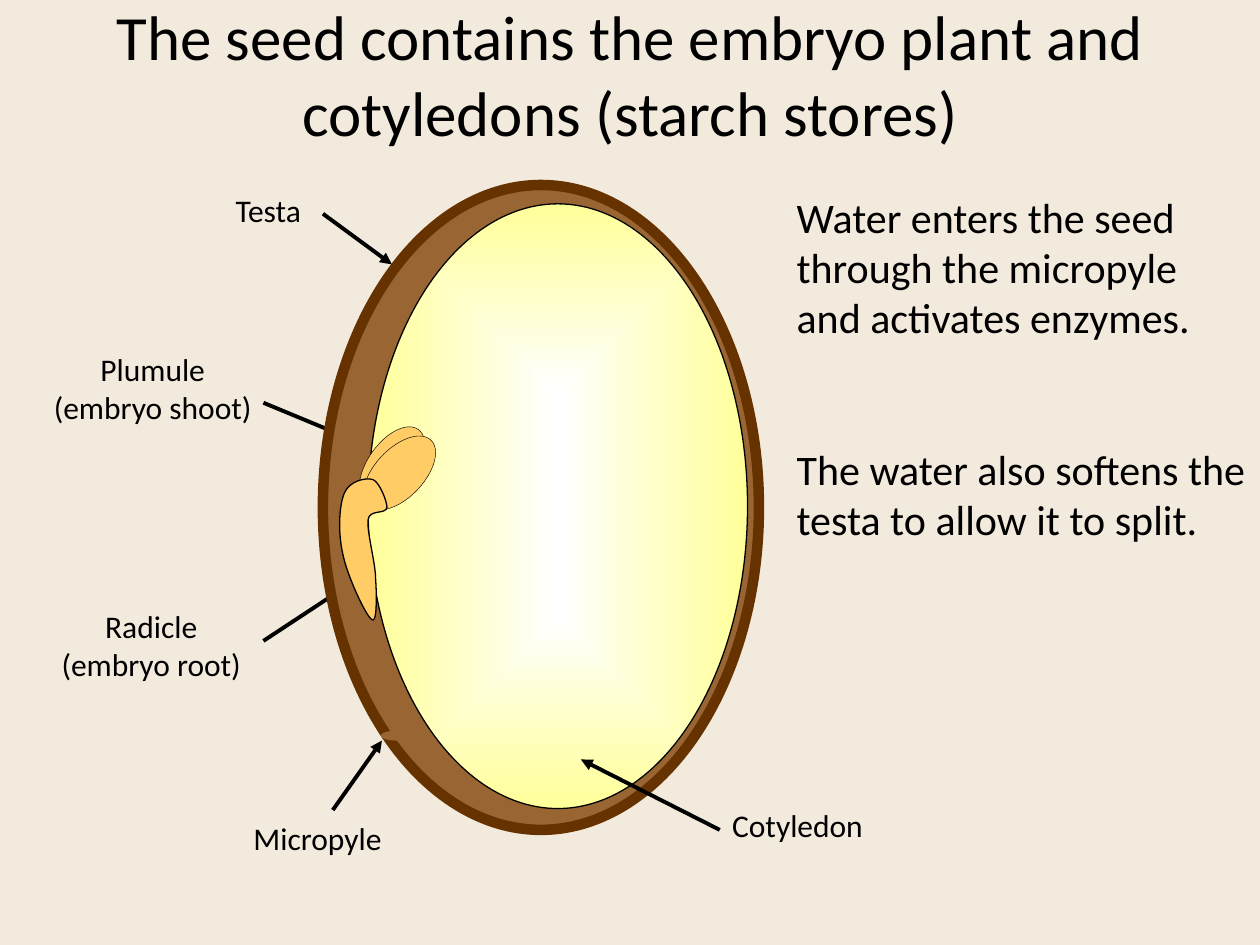
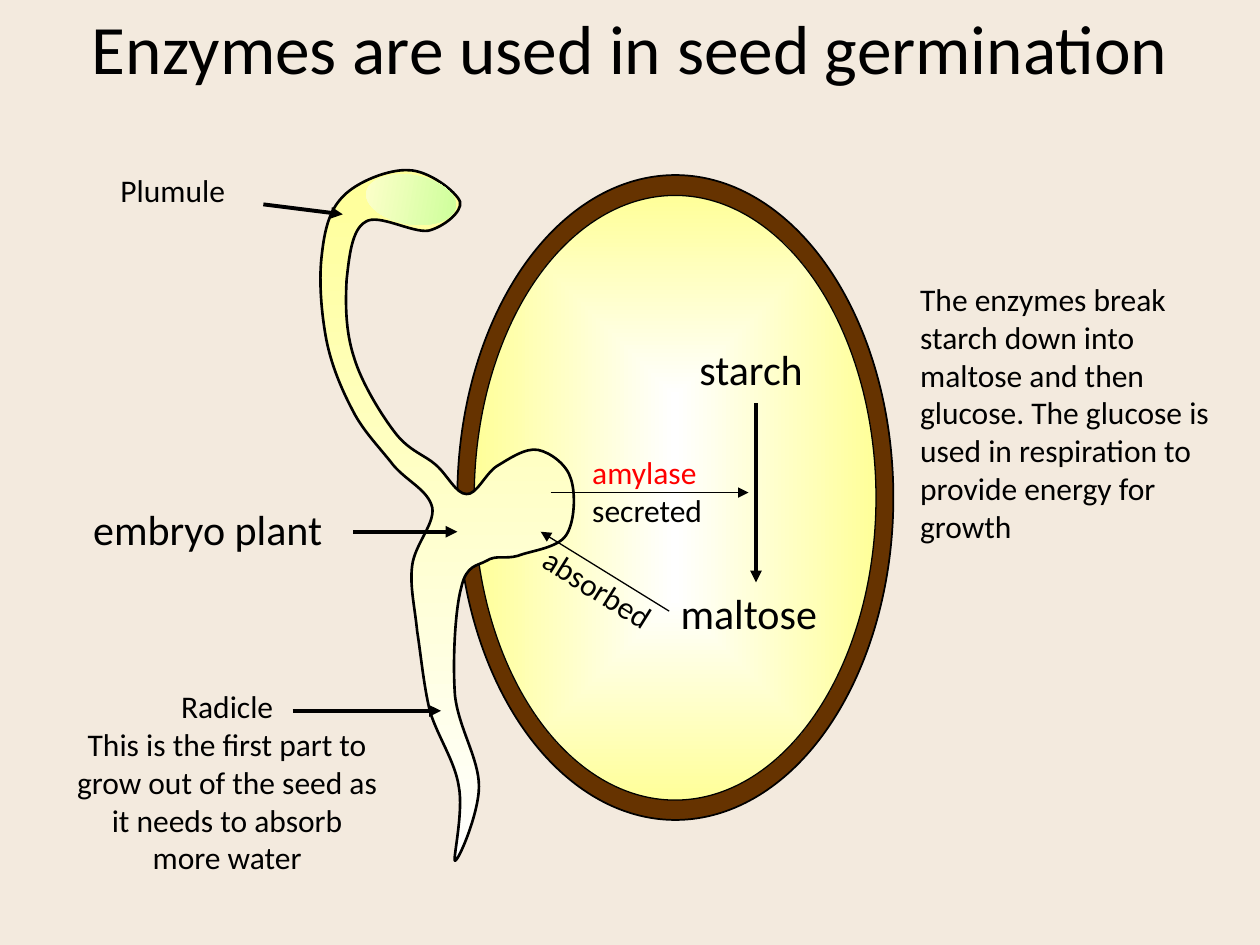
"""Build two slides on the seed and its germination."""
from lxml import etree
from pptx import Presentation, util as u
from pptx.dml import color
from pptx.enum import shapes, text
from pptx.oxml import ns

FONT = "Calibri"
HUES = {
    "sand": "F3EADE", "ink": "000000", "red": "FF0000", "white": "FFFFFF",
    "coat": "663300", "husk": "996633", "germ": "FFCC66",
    "lemon": "FFFF99", "cream": "FFFFCC", "lime": "CCFF99",
}
SEED = (8.79, 13)
LEAF = (1.83, 0.99)
ROOT = [
    (28, 2), (22, 0, 9, 3, 5, 13), (1, 23, 0, 44, 4, 61), (7, 77, 22, 110, 27, 113),
    (31, 117, 31, 94, 30, 81), (30, 68, 23, 44, 24, 34), (25, 25, 38, 30, 39, 24),
    (39, 19, 33, 4, 28, 2),
]
SPROUT = [
    (141, 239), (151, 233, 164, 224, 174, 226), (184, 228, 197, 238, 200, 249),
    (204, 261, 203, 284, 196, 294), (189, 304, 168, 306, 158, 310),
    (147, 313, 141, 309, 133, 314), (126, 318, 117, 317, 113, 335),
    (108, 353, 106, 394, 108, 421), (111, 447, 127, 471, 127, 493),
    (127, 514, 111, 552, 108, 552), (106, 552, 115, 513, 111, 493),
    (108, 473, 94, 453, 88, 433), (83, 412, 81, 389, 78, 370),
    (76, 350, 72, 334, 74, 318), (76, 301, 92, 285, 90, 272),
    (87, 258, 70, 251, 59, 238), (49, 225, 35, 211, 27, 195),
    (18, 178, 10, 159, 6, 139), (2, 118, 0, 93, 2, 74), (4, 55, 7, 37, 19, 25),
    (30, 13, 56, 3, 71, 4), (87, 4, 109, 21, 112, 29), (114, 37, 99, 49, 87, 52),
    (74, 54, 47, 38, 37, 45), (26, 51, 24, 73, 22, 91), (21, 110, 21, 132, 28, 153),
    (34, 173, 50, 199, 61, 213), (72, 227, 84, 230, 93, 238),
    (102, 246, 109, 261, 117, 261), (125, 262, 132, 245, 141, 239),
]


def rgb(name):
    """Return the named colour."""
    return color.RGBColor.from_string(HUES[name])


def shift(box, x, y, *size):
    """Return a place given from the corner of a box, as lengths."""
    return [u.Cm(n) for n in (box[0] + x, box[1] + y, *size)]


def write(frame, words, size=18, hues=("ink",), align="LEFT", gap=0, wrap=False):
    """Fill a text frame, one paragraph to a line of words."""
    frame.word_wrap = wrap
    frame.auto_size = text.MSO_AUTO_SIZE.NONE
    for i, line in enumerate(words.split("\n")):
        para = frame.add_paragraph() if i else frame.paragraphs[0]
        para.alignment = text.PP_ALIGN[align]
        para.space_before = u.Pt(gap if i else 0)
        run = para.add_run()
        run.text = line
        run.font.name, run.font.size = FONT, u.Pt(size)
        run.font.color.rgb = rgb(hues[i % len(hues)])


def label(slide, box, place, words, turn=0, **form):
    """Add a text box at a place within the box."""
    item = slide.shapes.add_textbox(*shift(box, *place))
    item.rotation = turn
    write(item.text_frame, words, **form)


def blend(fill, first, last, angle=None):
    """Fill with two colours, from the centre unless an angle is given."""
    fill.gradient()
    for stop, name, spot in zip(fill.gradient_stops, (first, last), (0, 1)):
        stop.color.rgb, stop.position = rgb(name), spot
    if angle is not None:
        fill.gradient_angle = angle
        return
    grad = fill._fill._gradFill
    grad.remove(grad.find(ns.qn("a:lin")))
    core = etree.SubElement(grad, ns.qn("a:path"), {"path": "shape"})
    etree.SubElement(core, ns.qn("a:fillToRect"), dict.fromkeys("ltrb", "50000"))


def paint(item, fill, edge="ink", width=0.75):
    """Set the fill, a name or a blend, and the edge of a shape."""
    item.shadow.inherit = False
    if isinstance(fill, str):
        item.fill.solid()
        item.fill.fore_color.rgb = rgb(fill)
    else:
        blend(item.fill, *fill)
    if width:
        item.line.color.rgb, item.line.width = rgb(edge), u.Pt(width)
    else:
        item.line.fill.background()


def oval(slide, box, place, fill, turn=0, **edge):
    """Add an ellipse at a place within the box."""
    item = slide.shapes.add_shape(shapes.MSO_SHAPE.OVAL, *shift(box, *place))
    item.rotation = turn
    paint(item, fill, **edge)


def arrow(slide, box, ends, width=2.25):
    """Add an arrow between two points of the box."""
    points = shift(box, *ends[:2]) + shift(box, *ends[2:])
    item = slide.shapes.add_connector(shapes.MSO_CONNECTOR.STRAIGHT, *points)
    item.line.color.rgb, item.line.width = rgb("ink"), u.Pt(width)
    props = item._element.spPr
    etree.SubElement(props.find(ns.qn("a:ln")), ns.qn("a:tailEnd"), type="triangle")
    etree.SubElement(props, ns.qn("a:effectLst"))


def bend(item):
    """Turn each three line segments of an outline into one cubic curve."""
    lines = list(item._element.iter(ns.qn("a:lnTo")))
    for trio in zip(*[iter(lines)] * 3):
        curve = etree.Element(ns.qn("a:cubicBezTo"))
        trio[0].addprevious(curve)
        for line in trio:
            curve.append(line[0])
            line.getparent().remove(line)


def organ(slide, box, place, curves, fill, **edge):
    """Add a closed curved outline, drawn in hundredths of 2.54 cm."""
    left, top = shift(box, *place)
    unit = u.Cm(2.54) // 100
    dots = [(left + c[i] * unit, top + c[i + 1] * unit)
            for c in curves for i in range(0, len(c), 2)]
    pen = slide.shapes.build_freeform(*dots[0])
    pen.add_line_segments(dots[1:], close=True)
    item = pen.convert_to_shape()
    bend(item)
    paint(item, fill, **edge)


def seed(slide, box, place, core, coat, **edge):
    """Add the coat of a seed and the starch store inside it."""
    oval(slide, box, (*place, *SEED), coat, **edge)
    oval(slide, box, core, ("white", "lemon"))


def begin(deck, words, size, height):
    """Add a slide with its title across the top."""
    slide = deck.slides.add_slide(deck.slide_layouts[5])
    title = slide.shapes.title
    title.left, title.top, title.width, title.height = shift((0, 0), 0, 0, 25.4, height)
    title.text_frame.vertical_anchor = text.MSO_ANCHOR.MIDDLE
    write(title.text_frame, words, size=size, align="CENTER", wrap=True)
    return slide


def notes(slide, box, words, **form):
    """Add the wrapped text beside a diagram."""
    label(slide, box, (0, 0, *box[2:]), words, wrap=True, **form)


def parts(slide, box):
    """Draw the parts of the resting seed with their labels."""
    for ends in ((4.62, 4.39, 7.01, 5.38), (4.62, 9.19, 6.73, 7.8)):
        arrow(slide, box, ends)
    seed(slide, box, (5.82, 0), (6.73, 0.38, 7.65, 12.19), "husk", edge="coat", width=6)
    for x, y, turn in ((6.3, 5.18, 305), (6.45, 5.31, 313.6)):
        oval(slide, box, (x, y, *LEAF), "germ", turn=turn, width=0.25)
    organ(slide, box, (6.12, 5.89), ROOT, "germ")
    oval(slide, box, (6.99, 11, 0.61, 0.2), "husk", width=0)
    for ends in ((6.02, 12.6, 7.01, 11.2), (5.82, 0.58, 7.21, 1.6),
                 (13.82, 13, 11.02, 11.58)):
        arrow(slide, box, ends)
    for place, words, align in (
        ((0, 3.2, 4.78, 1.78), "Plumule\n(embryo shoot)", "CENTER"),
        ((0.2, 8.39, 4.32, 1.78), "Radicle\n(embryo root)", "CENTER"),
        ((4.17, 12.65, 3.23, 1.02), "Micropyle", "LEFT"),
        ((3.81, 0, 2.11, 1.02), "Testa", "LEFT"),
        ((13.82, 12.4, 3.38, 1.02), "Cotyledon", "LEFT"),
    ):
        label(slide, box, place, words, align=align)


def growth(slide, box):
    """Draw the sprouting seed and the path from starch to maltose."""
    seed(slide, box, (7.92, 0.2), (8.26, 0.61, 8.1, 12.19), "coat", width=1)
    organ(slide, box, (5.13, 0), SPROUT, ("lemon", "white", 270), width=1.5)
    oval(slide, box, (6.07, 0.2, *LEAF), ("cream", "lime", 0), turn=9.5, width=0)
    for ends in ((5.82, 7.39, 7.92, 7.39), (13.94, 4.8, 13.94, 8.41),
                 (4.01, 0.79, 5.61, 0.99), (4.6, 11, 7.59, 11)):
        arrow(slide, box, ends)
    for ends in ((9.8, 6.6, 13.79, 6.6), (12.19, 8.99, 9.6, 7.39)):
        arrow(slide, box, ends, width=0.75)
    for place, words in (
        ((12.55, 3.47, 2.82, 1.27), "starch"),
        ((0.33, 6.69, 5.41, 1.27), "embryo plant"),
        ((12.17, 8.38, 3.48, 1.27), "maltose"),
    ):
        label(slide, box, place, words, size=24)
    label(slide, box, (10.39, 5.68, 2.95, 1.78), "amylase\nsecreted", hues=("red", "ink"))
    label(slide, box, (9.27, 8.08, 3.15, 1.02), "absorbed", turn=32.2)
    label(slide, box, (0.79, 0, 2.79, 1.02), "Plumule", align="CENTER")
    label(slide, box, (-0.04, 10.4, 6.64, 4.06),
          "Radicle\nThis is the first part to grow out of the seed as it needs "
          "to absorb more water", align="CENTER", wrap=True)


def main():
    """Build and save the deck."""
    deck = Presentation()
    deck.slide_width, deck.slide_height = u.Cm(25.4), u.Cm(19.05)
    back = deck.slide_master.background.fill
    back.solid()
    back.fore_color.rgb = rgb("sand")

    slide = begin(deck, "The seed contains the embryo plant and cotyledons (starch stores)",
                  36, 2.95)
    notes(slide, (15.81, 3.73, 9.59, 8.38),
          "Water enters the seed through the micropyle and activates enzymes.\n"
          "The water also softens the testa to allow it to split.", size=24, gap=57.6)
    parts(slide, (0.69, 3.73))

    slide = begin(deck, "Enzymes are used in seed germination", 39.6, 1.9)
    growth(slide, (1.3, 3.33))
    notes(slide, (18.3, 5.52, 6.81, 5.59),
          "The enzymes break starch down into maltose and then glucose. "
          "The glucose is used in respiration to provide energy for growth")
    deck.save("out.pptx")


if __name__ == "__main__":
    main()
